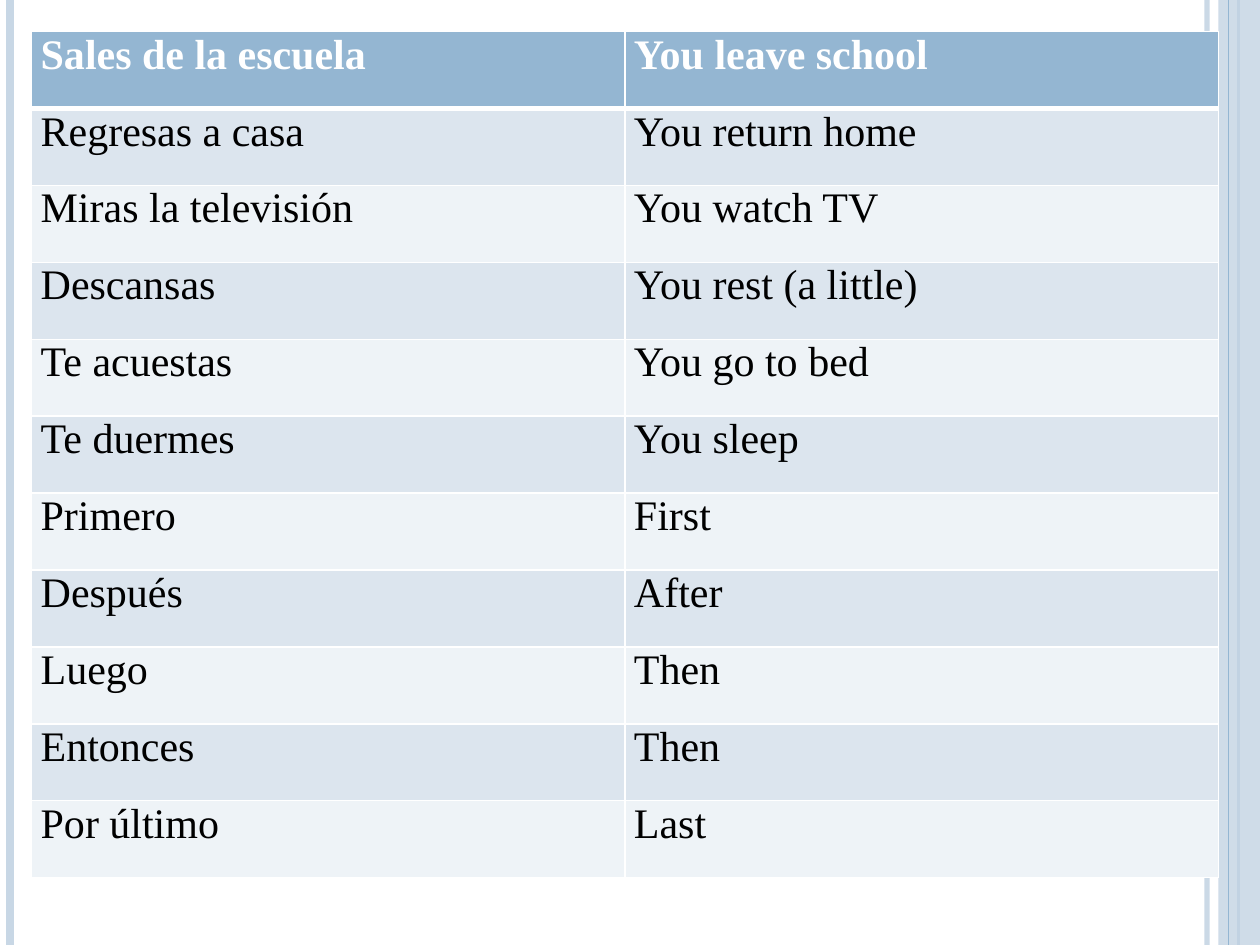
"""Build a Spanish-English vocabulary slide: one table between striped side bands."""
from lxml import etree
from pptx import Presentation
from pptx.dml.color import RGBColor
from pptx.enum.shapes import MSO_CONNECTOR, MSO_SHAPE
from pptx.oxml.ns import qn
from pptx.util import Cm, Pt

STRAIGHT = MSO_CONNECTOR.STRAIGHT
RECTANGLE = MSO_SHAPE.RECTANGLE

WHITE = RGBColor(0xFF, 0xFF, 0xFF)
BLACK = RGBColor(0x00, 0x00, 0x00)
BLUE = RGBColor(0x94, 0xB6, 0xD2)
PALE_BLUE = RGBColor(0xC8, 0xD7, 0xE5)
ODD_ROW = RGBColor(0xDC, 0xE5, 0xEE)
EVEN_ROW = RGBColor(0xEE, 0xF3, 0xF7)

SLIDE_WIDTH, SLIDE_HEIGHT = Cm(25.4), Cm(19.05)
ROW_HEIGHT, COLUMN_WIDTH = Cm(1.55), Cm(11.96)
CELL_MARGINS = {"margin_left": Cm(0.18), "margin_right": Cm(0.18),
                "margin_top": 0, "margin_bottom": 0}

VOCABULARY = [
    ("Sales de la escuela", "You leave school"),
    ("Regresas a casa", "You return home"),
    ("Miras la televisión", "You watch TV"),
    ("Descansas", "You rest (a little)"),
    ("Te acuestas", "You go to bed"),
    ("Te duermes", "You sleep"),
    ("Primero", "First"),
    ("Después", "After"),
    ("Luego", "Then"),
    ("Entonces", "Then"),
    ("Por último", "Last"),
]


def add_stripe(x, color, width, opacity=100):
    stripe = slide.shapes.add_connector(STRAIGHT, Cm(x), 0, Cm(x), SLIDE_HEIGHT)
    stripe.line.color.rgb = color
    stripe.line.width = Pt(width)
    etree.SubElement(stripe._element.spPr, qn("a:effectLst"))
    set_opacity(stripe, opacity)


def set_opacity(shape, percent):
    color = next(shape._element.spPr.iter(qn("a:srgbClr")))
    etree.SubElement(color, qn("a:alpha"), val=str(percent * 1000))


prs = Presentation()
prs.slide_width, prs.slide_height = SLIDE_WIDTH, SLIDE_HEIGHT
slide = prs.slides.add_slide(prs.slide_layouts[6])

for x, color, width, opacity in [(24.33, PALE_BLUE, 3, 93),
                                 (0.2, PALE_BLUE, 4.5, 100),
                                 (24.97, BLUE, 1.5, 100)]:
    add_stripe(x, color, width, opacity)

band_left = Cm(24.56)
side_band = slide.shapes.add_shape(RECTANGLE, band_left, 0,
                                   SLIDE_WIDTH - band_left, SLIDE_HEIGHT)
side_band.shadow.inherit = False
side_band.fill.solid()
side_band.fill.fore_color.rgb = PALE_BLUE
side_band.line.fill.background()
set_opacity(side_band, 87)

add_stripe(24.77, BLUE, 0.75)

table = slide.shapes.add_table(len(VOCABULARY), 2, Cm(0.64), Cm(0.64),
                               2 * COLUMN_WIDTH, len(VOCABULARY) * ROW_HEIGHT).table
for column in table.columns:
    column.width = COLUMN_WIDTH

for row, phrases in enumerate(VOCABULARY):
    table.rows[row].height = ROW_HEIGHT
    is_header = row == 0
    row_fill = BLUE if is_header else (ODD_ROW if row % 2 else EVEN_ROW)
    font_format = {"name": "Times New Roman", "size": Pt(24), "bold": is_header}
    border_widths = {"lnL": 1, "lnR": 1, "lnT": 3 if row == 1 else 1,
                     "lnB": 3 if is_header else 1}
    for column, phrase in enumerate(phrases):
        cell = table.cell(row, column)
        for name, value in CELL_MARGINS.items():
            setattr(cell, name, value)
        cell_properties = cell._tc.get_or_add_tcPr()
        for side, width in border_widths.items():
            border = etree.SubElement(cell_properties, qn(f"a:{side}"), w=str(Pt(width)))
            border_fill = etree.SubElement(border, qn("a:solidFill"))
            etree.SubElement(border_fill, qn("a:srgbClr"), val=str(WHITE))
        cell.fill.solid()
        cell.fill.fore_color.rgb = row_fill
        run = cell.text_frame.paragraphs[0].add_run()
        run.text = phrase
        for name, value in font_format.items():
            setattr(run.font, name, value)
        run.font.color.rgb = WHITE if is_header else BLACK

prs.save("out.pptx")
